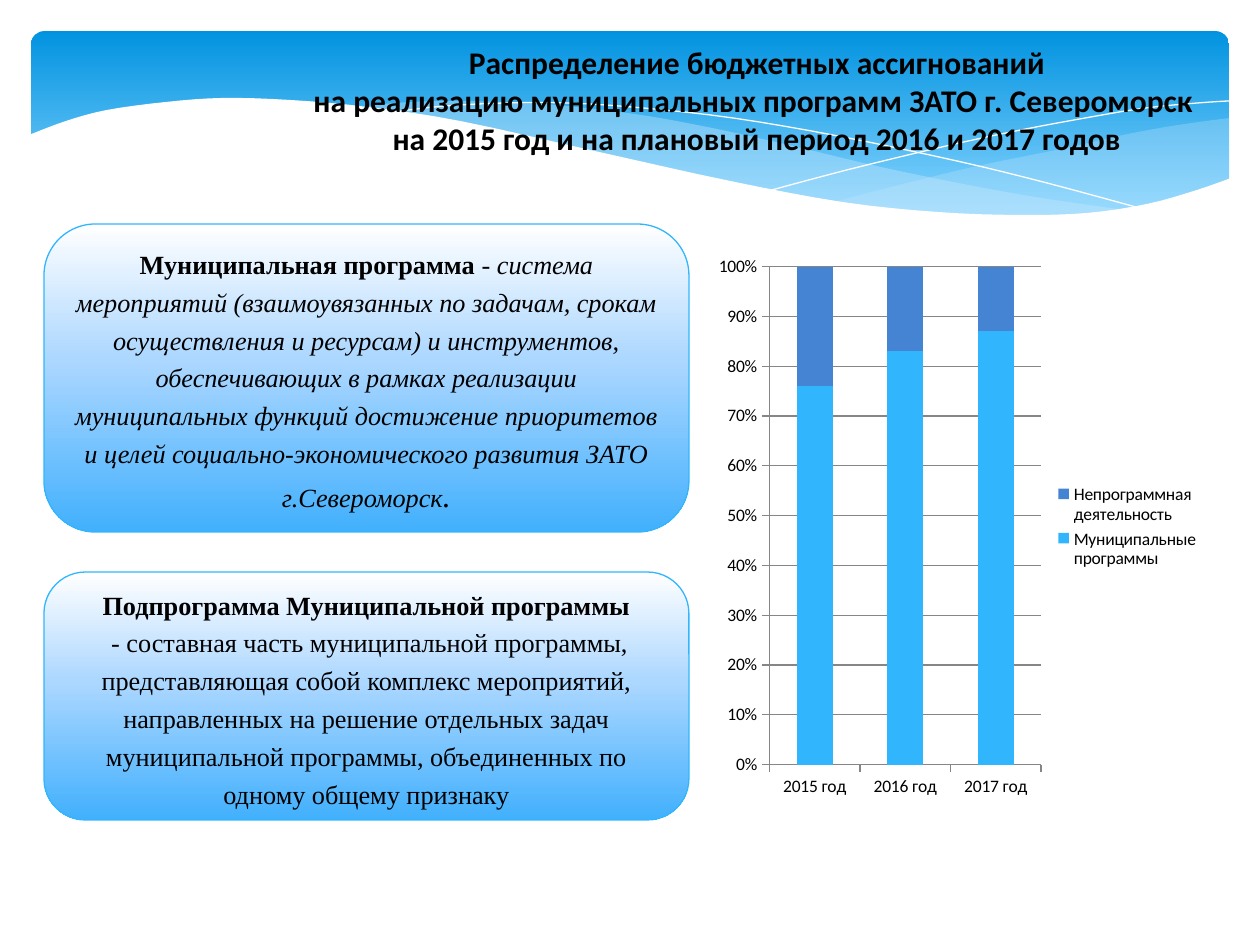
from copy import deepcopy
from dataclasses import dataclass

from lxml import etree
from pptx import Presentation
from pptx import util as u
from pptx.chart import data as chart_data
from pptx.dml import color
from pptx.enum import chart as charts, shapes, text
from pptx.oxml import ns, parse_xml

PX = 914400 / 126


@dataclass(frozen=True)
class Theme:
    """Colours, fonts and type sizes of the slide."""
    ink: str = "000000"
    white: str = "FFFFFF"
    mist: str = "C6E7FC"
    grid: str = "868686"
    sky: str = "31B6FD"
    blue: str = "4584D3"
    banner: tuple = ((0, "0293E0"), (90, "83D3FE"))
    panel: tuple = ((0, "FFFFFF"), (44, "ACD7FF"), (100, "42B0FD"))
    sans: str = "Calibri"
    serif: str = "Times New Roman"
    large: int = 18
    body: int = 15
    small: int = 10


THEME = Theme()

FRONT_WAVE = [(1231, 178), (1197, 190), (1147, 204), (1087, 213), (1019, 215), (937, 212),
              (842, 202), (730, 181), (599, 152), (460, 121), (368, 107), (290, 100),
              (223, 98), (166, 102), (107, 110), (66, 121), (29, 135)]
FRONT_BASE = [(29, 282), (1231, 282)]
RIGHT_TOP = [(1230, 118), (1178, 125), (1123, 135), (1066, 148), (982, 165), (919, 180), (833, 202)]
RIGHT_BOTTOM = [(833, 202), (906, 210), (969, 215), (1026, 217), (1076, 215), (1121, 211),
                (1160, 202), (1196, 192), (1230, 178)]
MIDDLE_TOP = [(1125, 210), (1017, 194), (890, 169), (793, 146), (717, 129), (648, 116),
              (586, 108), (529, 103), (455, 101), (394, 103), (360, 108)]
MIDDLE_BOTTOM = [(360, 108), (431, 118), (509, 133), (619, 159), (713, 180), (799, 197),
                 (876, 208), (943, 214), (1003, 217), (1056, 217), (1104, 213), (1125, 210)]
FALLING_LINE = [(389, 113), (401, 111), (445, 106), (505, 103), (567, 103), (643, 108),
                (733, 118), (838, 136), (957, 161), (1047, 183), (1143, 209)]
RISING_LINE = [(772, 190), (847, 170), (942, 147), (1016, 131), (1091, 117), (1146, 108),
               (1198, 103), (1229, 101)]

TITLE = ["Распределение бюджетных ассигнований",
         "на реализацию муниципальных программ ЗАТО г. Североморск ",
         "на 2015 год и на плановый период 2016 и 2017 годов"]
PROGRAM = [[
    ("Муниципальная программа ", {"bold": True}),
    ("- ", {}),
    ("система мероприятий (взаимоувязанных по задачам, срокам осуществления и ресурсам) "
     "и инструментов, обеспечивающих в рамках реализации муниципальных функций достижение "
     "приоритетов и целей социально-экономического развития ЗАТО г.Североморск", {"italic": True}),
    (".", {"italic": True, "size": THEME.large}),
]]
SUBPROGRAM = [
    [("Подпрограмма Муниципальной программы", {"bold": True})],
    [(" ", {"bold": True}),
     ("- составная часть муниципальной программы, представляющая собой комплекс мероприятий, "
      "направленных на решение отдельных задач муниципальной программы, объединенных по одному "
      "общему признаку", {})],
]
YEARS = ["2015 год", "2016 год", "2017 год"]
SERIES = [("Муниципальные программы ", (76, 83, 87), THEME.sky),
          ("Непрограммная деятельность", (24, 17, 13), THEME.blue)]


def emu(*lengths):
    """Turn px lengths into EMU."""
    return [u.Emu(round(length * PX)) for length in lengths]


def rgb(value):
    """Return the colour object of a hex value."""
    return color.RGBColor.from_string(value)


def style_font(font, face, size, bold=False, italic=False):
    """Apply face, size and weight in the ink colour."""
    font.name, font.size, font.bold, font.italic = face, u.Pt(size), bold, italic
    font.color.rgb = rgb(THEME.ink)


def fill_gradient(shape, stops):
    """Fill a shape from top to bottom with the given stops."""
    shape.fill.gradient()
    shape.fill.gradient_angle = 270
    stop_list = shape._element.spPr.find(ns.qn("a:gradFill")).find(ns.qn("a:gsLst"))
    for _ in stops[2:]:
        stop_list.append(deepcopy(stop_list[-1]))
    for stop, (position, value) in zip(shape.fill.gradient_stops, stops):
        stop.position = position / 100
        stop.color.rgb = rgb(value)


def smooth(points, steps=4):
    """Return a Catmull-Rom curve through the points."""
    padded = [points[0], *points, points[-1]]
    curve = [points[0]]
    for a, b, c, d in zip(padded, padded[1:], padded[2:], padded[3:]):
        for t in (step / steps for step in range(1, steps + 1)):
            curve.append(tuple(
                (2 * q + (r - p) * t + (2 * p - 5 * q + 4 * r - s) * t ** 2
                 + (3 * q - p - 3 * r + s) * t ** 3) / 2
                for p, q, r, s in zip(a, b, c, d)))
    return curve


def add_outline(page, points, closed):
    """Draw a freeform without shadow through px points."""
    start, *rest = [emu(*point) for point in points]
    builder = page.shapes.build_freeform(*start, scale=1.0)
    builder.add_line_segments(rest, close=closed)
    shape = builder.convert_to_shape()
    shape.shadow.inherit = False
    return shape


def add_wave(page, points, value, opacity=100):
    """Add a filled wave."""
    wave = add_outline(page, points, True)
    wave.fill.solid()
    wave.fill.fore_color.rgb = rgb(value)
    wave.line.fill.background()
    if opacity < 100:
        tint = wave._element.spPr.find(ns.qn("a:solidFill"))[0]
        etree.SubElement(tint, ns.qn("a:alpha"), val=str(opacity * 1000))


def add_hairline(page, points):
    """Add a thin white curve."""
    curve = add_outline(page, smooth(points), False)
    curve.fill.background()
    curve.line.color.rgb = rgb(THEME.white)
    curve.line.width = 0


def add_rounded(page, frame, stops):
    """Add a rounded rectangle with a gradient."""
    box = page.shapes.add_shape(shapes.MSO_SHAPE.ROUNDED_RECTANGLE, *emu(*frame))
    box.shadow.inherit = False
    fill_gradient(box, stops)
    return box


def add_banner(page):
    """Add the blue banner with its waves."""
    banner = add_rounded(page, (31, 31, 1198, 197), THEME.banner)
    banner.adjustments[0] = 0.07
    banner.line.fill.background()
    add_wave(page, smooth(RIGHT_TOP) + smooth(RIGHT_BOTTOM), THEME.mist, 29)
    add_wave(page, smooth(MIDDLE_TOP) + smooth(MIDDLE_BOTTOM), THEME.mist, 40)
    add_hairline(page, FALLING_LINE)
    add_hairline(page, RISING_LINE)
    add_wave(page, smooth(FRONT_WAVE) + FRONT_BASE, THEME.white)


def add_title(page):
    """Add the three centred title lines."""
    box = page.shapes.add_textbox(*emu(292, 37, 930, 127))
    box.text_frame.word_wrap = False
    box.text_frame.text = "\n".join(TITLE)
    for para in box.text_frame.paragraphs:
        para.alignment = text.PP_ALIGN.CENTER
        style_font(para.runs[0].font, THEME.sans, THEME.large, bold=True)


def add_panel(page, top, height, paragraphs):
    """Add a definition panel with mixed spans."""
    box = add_rounded(page, (44, top, 645, height), THEME.panel)
    box.line.color.rgb = rgb(THEME.sky)
    box.line.width = u.Pt(0.75)
    frame = box.text_frame
    frame.word_wrap = True
    frame.vertical_anchor = text.MSO_ANCHOR.MIDDLE
    for index, spans in enumerate(paragraphs):
        para = frame.add_paragraph() if index else frame.paragraphs[0]
        para.alignment = text.PP_ALIGN.CENTER
        para.line_spacing = 1.2
        for words, look in spans:
            span = para.add_run()
            span.text = words
            style_font(span.font, THEME.serif, **{"size": THEME.body, **look})


def place_plot(chart, **fractions):
    """Fix the inner plot area as fractions of the chart."""
    area = chart._chartSpace.chart.plotArea
    for old in area.findall(ns.qn("c:layout")):
        area.remove(old)
    parts = "".join(f'<c:{key} val="{value}"/>' for key, value in fractions.items())
    area.insert(0, parse_xml(
        f'<c:layout {ns.nsdecls("c")}><c:manualLayout><c:layoutTarget val="inner"/>'
        f'<c:xMode val="edge"/><c:yMode val="edge"/>{parts}</c:manualLayout></c:layout>'))


def add_share_chart(page):
    """Add the stacked chart of programme shares."""
    data = chart_data.CategoryChartData()
    data.categories = YEARS
    for name, values, _ in SERIES:
        data.add_series(name, values)
    chart = page.shapes.add_chart(
        charts.XL_CHART_TYPE.COLUMN_STACKED_100, *emu(709, 244, 503, 566), data).chart
    style_font(chart.font, THEME.sans, THEME.large)
    chart.has_title = False
    chart.has_legend = True
    chart.legend.position = charts.XL_LEGEND_POSITION.RIGHT
    chart.legend.include_in_layout = False
    style_font(chart.legend.font, THEME.sans, THEME.small)
    for axis in (chart.category_axis, chart.value_axis):
        axis.major_tick_mark = charts.XL_TICK_MARK.OUTSIDE
        axis.format.line.color.rgb = rgb(THEME.grid)
        style_font(axis.tick_labels.font, THEME.sans, THEME.small)
    chart.value_axis.major_gridlines.format.line.color.rgb = rgb(THEME.grid)
    chart.value_axis.tick_labels.number_format = "0%"
    chart.value_axis.tick_labels.number_format_is_linked = False
    plot = chart.plots[0]
    plot.gap_width, plot.overlap, plot.vary_by_categories = 150, 100, False
    for series, (_, _, value) in zip(plot.series, SERIES):
        series.format.fill.solid()
        series.format.fill.fore_color.rgb = rgb(value)
    place_plot(chart, x=0.12, y=0.04, w=0.54, h=0.88)


def main():
    """Build and save the slide."""
    deck = Presentation()
    deck.slide_width, deck.slide_height = emu(1260, 945)
    page = deck.slides.add_slide(deck.slide_layouts[6])
    add_banner(page)
    add_title(page)
    add_share_chart(page)
    add_panel(page, 224, 308, PROGRAM)
    add_panel(page, 572, 248, SUBPROGRAM)
    deck.save("out.pptx")


if __name__ == "__main__":
    main()
